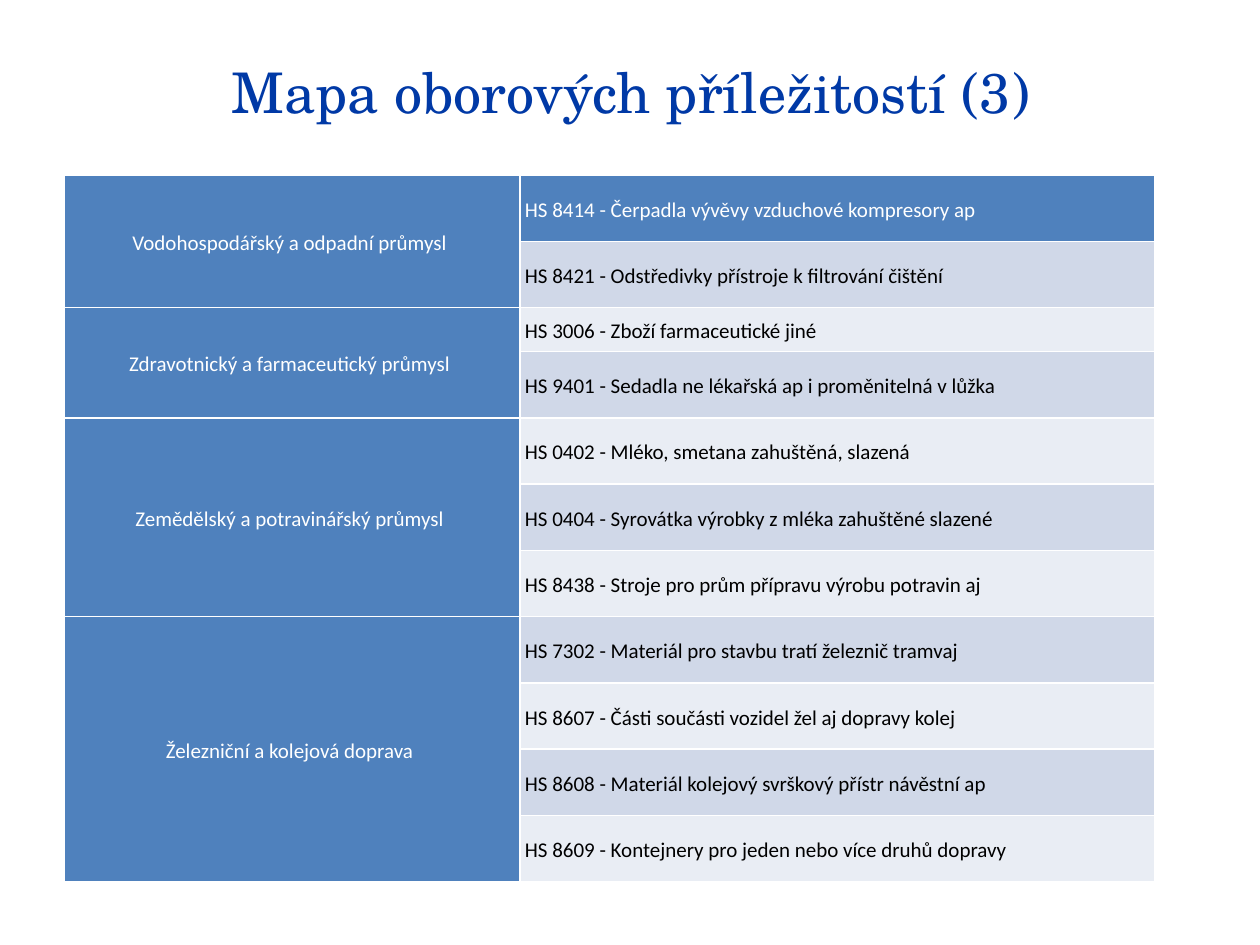
from lxml.etree import SubElement
from pptx import Presentation
from pptx.dml.color import RGBColor
from pptx.enum.text import MSO_ANCHOR, PP_ALIGN
from pptx.oxml.ns import qn
from pptx.util import Emu, Pt

COLORS = {
    "title": "0039A6",
    "head": "4F81BD",
    "dark": "D0D8E8",
    "light": "E9EDF4",
    "white": "FFFFFF",
    "black": "000000",
}

# Each industry with its customs codes
GROUPS = [
    ("Vodohospodářský a odpadní průmysl ", [
        "HS 8414 - Čerpadla vývěvy vzduchové kompresory ap",
        "HS 8421 - Odstředivky přístroje k filtrování čištění",
    ]),
    ("Zdravotnický a farmaceutický průmysl ", [
        "HS 3006 - Zboží farmaceutické jiné",
        "HS 9401 - Sedadla ne lékařská ap i proměnitelná v lůžka",
    ]),
    ("Zemědělský a potravinářský průmysl ", [
        "HS 0402 - Mléko, smetana zahuštěná, slazená",
        "HS 0404 - Syrovátka výrobky z mléka zahuštěné slazené",
        "HS 8438 - Stroje pro prům přípravu výrobu potravin aj",
    ]),
    ("Železniční a kolejová doprava ", [
        "HS 7302 - Materiál pro stavbu tratí železnič tramvaj",
        "HS 8607 - Části součásti vozidel žel aj dopravy kolej",
        "HS 8608 - Materiál kolejový svrškový přístr návěstní ap",
        "HS 8609 - Kontejnery pro jeden nebo více druhů dopravy",
    ]),
]
SHORT = 2  # index of the one low row


def px(n):
    return Emu(round(n * 914400 / 126))


def color(name):
    return RGBColor.from_string(COLORS[name])


def write(frame, text, *, size, font, ink, align=PP_ALIGN.LEFT, lead=None):
    frame.word_wrap = True
    para = frame.paragraphs[0]
    para.alignment = align
    para.line_spacing = lead
    run = para.add_run()
    run.text = text
    run.font.size = Pt(size)
    run.font.name = font
    run.font.color.rgb = color(ink)


def border(cell):
    props = cell._tc.get_or_add_tcPr()
    for i, side in enumerate(("lnL", "lnR", "lnT", "lnB")):
        line = props.makeelement(qn(f"a:{side}"), {"w": str(Pt(1))})
        fill = SubElement(line, qn("a:solidFill"))
        SubElement(fill, qn("a:srgbClr"), val=COLORS["white"])
        props.insert(i, line)


def paint(cell, fill):
    cell.fill.solid()
    cell.fill.fore_color.rgb = color(fill)
    cell.vertical_anchor = MSO_ANCHOR.MIDDLE
    cell.margin_left = cell.margin_right = px(5)
    cell.margin_top = cell.margin_bottom = px(7)
    border(cell)


def add_title(slide, text):
    title = slide.shapes.title
    title.left, title.top = px(64), px(13)
    title.width, title.height = px(1134), px(157)
    title.text_frame.vertical_anchor = MSO_ANCHOR.MIDDLE
    write(title.text_frame, text, size=32, font="TeX Gyre Schola",
          ink="title", align=PP_ALIGN.CENTER)


def add_grid(slide):
    codes = [code for _, group in GROUPS for code in group]
    low, tall = px(44), px(663) // 10
    grid = slide.shapes.add_table(
        len(codes), 2, px(64), px(175), px(1091), px(707)).table
    grid.columns[0].width, grid.columns[1].width = px(456), px(635)
    style = {"size": 12, "font": "Calibri", "lead": 1.15}

    # Code column: a header row, then alternating bands
    for i, code in enumerate(codes):
        grid.rows[i].height = low if i == SHORT else tall
        fill = "head" if i == 0 else "dark" if i % 2 else "light"
        paint(grid.cell(i, 0), "head")
        paint(grid.cell(i, 1), fill)
        write(grid.cell(i, 1).text_frame, code,
              ink="black" if i else "white", **style)

    # Industry column: one merged cell for each group
    row = 0
    for name, group in GROUPS:
        cell = grid.cell(row, 0)
        cell.merge(grid.cell(row + len(group) - 1, 0))
        write(cell.text_frame, name, ink="white",
              align=PP_ALIGN.CENTER, **style)
        row += len(group)


def main():
    deck = Presentation()
    deck.slide_width, deck.slide_height = px(1260), px(945)
    slide = deck.slides.add_slide(deck.slide_layouts[5])
    add_title(slide, "Mapa oborových příležitostí (3)")
    add_grid(slide)
    deck.save("out.pptx")


if __name__ == "__main__":
    main()
